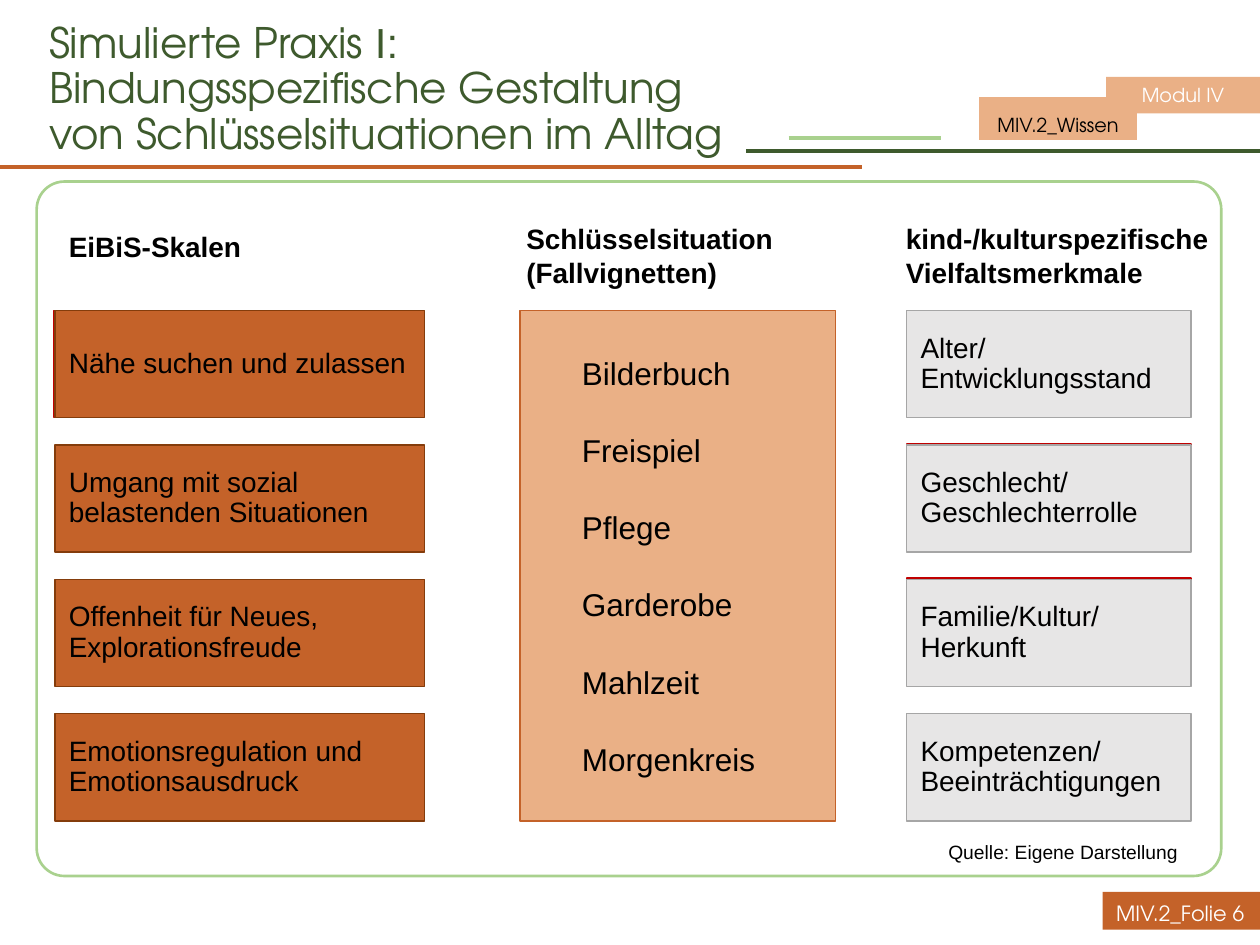
from lxml import etree
from pptx import Presentation
from pptx.dml.color import RGBColor
from pptx.enum.shapes import MSO_CONNECTOR, MSO_SHAPE
from pptx.enum.text import MSO_ANCHOR, MSO_AUTO_SIZE, PP_ALIGN
from pptx.oxml.ns import qn
from pptx.util import Cm, Pt

STRAIGHT = MSO_CONNECTOR.STRAIGHT
RECT, ROUNDED = MSO_SHAPE.RECTANGLE, MSO_SHAPE.ROUNDED_RECTANGLE
TOP, MIDDLE = MSO_ANCHOR.TOP, MSO_ANCHOR.MIDDLE
LEFT, CENTER, RIGHT = PP_ALIGN.LEFT, PP_ALIGN.CENTER, PP_ALIGN.RIGHT
NO_FIT = MSO_AUTO_SIZE.NONE

# Content; a paragraph is a string or a list of (text, font) pieces
THEME = {
    "display": "TeX Gyre Adventor", "body": "Arial",
    "orange": "C46229", "peach": "EAB086", "grey": "E7E6E6",
    "grey_edge": "A6A6A6", "brown": "843C0B", "red": "C00000",
    "green": "3E5A2D", "light_green": "A9D18E",
    "black": "000000", "white": "FFFFFF",
    "title_size": 24, "list_size": 18, "label_size": 16,
    "footer_size": 12, "small_size": 11,
}
TITLE = [
    ("Simulierte Praxis ", "display"),
    ("I:\n", "body"),
    ("Bindungsspezifische Gestaltung\nvon Schlüsselsituationen im Alltag", "display"),
]
HEADINGS = [  # text, left, top, width
    ("EiBiS-Skalen", 1.14, 4.5, 5),
    ("Schlüsselsituation\n(Fallvignetten)", 10.36, 4.34, 7),
    ("kind-/kulturspezifische\nVielfaltsmerkmale", 18.01, 4.34, 7),
]
SITUATIONS = ["Bilderbuch", "Freispiel", "Pflege", "Garderobe", "Mahlzeit", "Morgenkreis"]
CARD_COLUMNS = [
    {"left": 1.11, "width": 7.45, "fill": "orange", "edge": "brown",
     "red_shift": (-0.02, 0), "red_rows": [0],
     "cards": ["Nähe suchen und zulassen",
               "Umgang mit sozial belastenden Situationen",
               "Offenheit für Neues, Explorationsfreude",
               "Emotionsregulation und Emotionsausdruck"]},
    {"left": 18.28, "width": 5.73, "fill": "grey", "edge": "grey_edge",
     "red_shift": (0, -0.02), "red_rows": [1, 2],
     "cards": ["Alter/\nEntwicklungsstand",
               "Geschlecht/\nGeschlechterrolle",
               "Familie/Kultur/\nHerkunft",
               "Kompetenzen/\nBeeinträchtigungen"]},
]
HEADER_RULES = [  # left, right, height, colour
    (-0.08, 17.37, 3.37, "orange"),
    (15.04, 25.4, 3.04, "green"),
    (15.9, 18.97, 2.78, "light_green"),
]
CARD_TOP, CARD_HEIGHT, CARD_PITCH = 6.26, 2.16, 2.71
GRID_HEIGHT = 3 * CARD_PITCH + CARD_HEIGHT


def color(name):
    return RGBColor.from_string(THEME[name])


def place(shape, left, top, width, height):
    shape.left, shape.top = Cm(left), Cm(top)
    shape.width, shape.height = Cm(width), Cm(height)


def paint(shape, fill=None, edge=None, weight=0.75):
    if fill:
        shape.fill.solid()
        shape.fill.fore_color.rgb = color(fill)
    else:
        shape.fill.background()
    if edge:
        shape.line.color.rgb = color(edge)
        shape.line.width = Pt(weight)
    else:
        shape.line.fill.background()


def add_box(slide, bounds, kind=RECT, **look):
    box = slide.shapes.add_shape(kind, *map(Cm, bounds))
    box.shadow.inherit = False
    paint(box, **look)
    return box


def write(shape, paragraphs, size, font="body", ink="black", bold=False, align=LEFT,
          anchor=TOP, insets=(0.25, 0.13, 0.25, 0.13), spacing=1.0, gap=0):
    frame = shape.text_frame
    frame.word_wrap = True
    frame.auto_size = NO_FIT
    frame.vertical_anchor = anchor
    (frame.margin_left, frame.margin_top,
     frame.margin_right, frame.margin_bottom) = map(Cm, insets)
    for index, content in enumerate(paragraphs):
        paragraph = frame.add_paragraph() if index else frame.paragraphs[0]
        paragraph.alignment = align
        paragraph.line_spacing = spacing
        paragraph.space_before = Pt(gap if index else 0)
        pieces = [(content, font)] if isinstance(content, str) else content
        for text, face in pieces:
            for line_number, line in enumerate(text.split("\n")):
                if line_number:
                    paragraph.add_line_break()
                if line:
                    run = paragraph.add_run()
                    run.text = line
                    run.font.name = THEME[face]
                    run.font.size = Pt(THEME[size])
                    run.font.bold = bold
                    run.font.color.rgb = color(ink)
        # Line breaks take the size of the text around them
        for line_break in paragraph._p.findall(qn("a:br")):
            etree.SubElement(line_break, qn("a:rPr"), sz=str(THEME[size] * 100))


def add_text(slide, bounds, paragraphs, size, **text_format):
    write(slide.shapes.add_textbox(*map(Cm, bounds)), paragraphs, size, **text_format)


def main():
    deck = Presentation()
    deck.slide_width, deck.slide_height = Cm(25.4), Cm(19.05)
    slide = deck.slides.add_slide(deck.slide_layouts[1])
    title, situations = slide.placeholders

    # Header rules and content frame
    for left, right, height, ink in HEADER_RULES:
        rule = slide.shapes.add_connector(STRAIGHT, Cm(left), Cm(height), Cm(right), Cm(height))
        rule.line.color.rgb = color(ink)
        rule.line.width = Pt(2.25)
        etree.SubElement(rule._element.spPr, qn("a:effectLst"))
    frame = add_box(slide, (0.74, 3.66, 23.88, 14), ROUNDED, edge="light_green", weight=1.5)
    frame.adjustments[0] = 0.04

    # Module tags and slide number
    section = add_box(slide, (19.74, 1.96, 3.18, 0.86), fill="peach")
    write(section, ["MIV.2_Wissen"], "small_size", font="display", align=CENTER,
          anchor=MIDDLE, insets=(0, 0, 0, 0), spacing=1.5)
    module = add_box(slide, (22.3, 1.55, 3.1, 0.74), fill="peach")
    write(module, ["Modul IV"], "small_size", font="display", ink="white",
          align=CENTER, anchor=MIDDLE, insets=(0, 0, 0, 0))
    footer = add_box(slide, (22.23, 17.98, 3.2, 0.76), fill="orange")
    write(footer, ["MIV.2_Folie 6"], "footer_size", font="display", ink="white",
          anchor=MIDDLE, insets=(0.27, 0.1, 0, 0))

    # Title
    place(title, 0.74, 0.45, 21.9, 3.68)
    write(title, [TITLE], "title_size", ink="green", insets=(0.25, 0, 0.25, 0), spacing=0.9)

    # Column headings
    for text, left, top, width in HEADINGS:
        add_text(slide, (left, top, width, 1.63), [text], "label_size", bold=True)

    # Key situations
    place(situations, 10.48, CARD_TOP, 6.36, GRID_HEIGHT)
    paint(situations, fill="peach", edge="orange")
    write(situations, SITUATIONS, "list_size", anchor=MIDDLE,
          insets=(1.25, 0.13, 0.25, 0.13), gap=22.5)
    for paragraph in situations.text_frame.paragraphs:
        properties = paragraph._p.get_or_add_pPr()
        properties.set("marL", "0")
        properties.set("indent", "0")
        etree.SubElement(properties, qn("a:buNone"))

    # Card columns, some cards with a red edge showing behind
    for column in CARD_COLUMNS:
        left, width = column["left"], column["width"]
        shift_x, shift_y = column["red_shift"]
        for row, text in enumerate(column["cards"]):
            top = CARD_TOP + row * CARD_PITCH
            if row in column["red_rows"]:
                add_box(slide, (left + shift_x, top + shift_y, width, CARD_HEIGHT),
                        fill=column["fill"], edge="red", weight=1)
            card = add_box(slide, (left, top, width, CARD_HEIGHT),
                           fill=column["fill"], edge=column["edge"])
            write(card, [text], "label_size", anchor=MIDDLE,
                  insets=(0.28, 0.03, 0.03, 0.03), spacing=0.9)

    # Source line
    add_text(slide, (18.59, 16.81, 5.41, 0.74), ["Quelle: Eigene Darstellung"],
             "small_size", align=RIGHT)

    deck.save("out.pptx")


if __name__ == "__main__":
    main()
